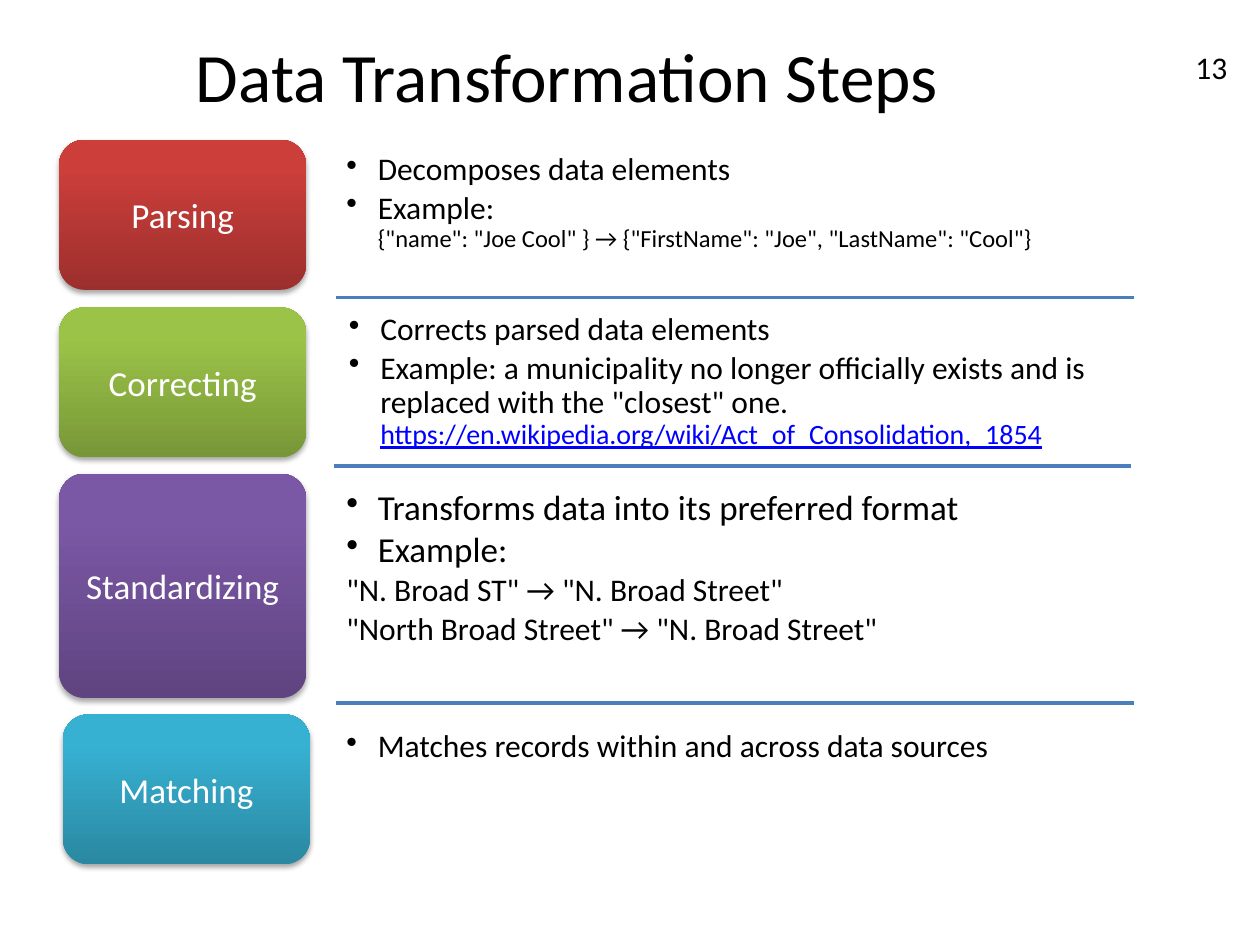
"""Build the Data Transformation Steps slide."""
import pptx
import pptx.dml.color
import pptx.enum.shapes
import pptx.enum.text
import pptx.oxml
import pptx.oxml.ns
import pptx.util
from pptx.util import Inches, Pt

ALIGN = pptx.enum.text.PP_ALIGN
MIDDLE = pptx.enum.text.MSO_ANCHOR.MIDDLE


def color(value):
    return pptx.dml.color.RGBColor.from_string(value)


def element(markup):
    return pptx.oxml.parse_xml(markup.replace(" ", f" {pptx.oxml.ns.nsdecls('a')} ", 1))


class StepSlide:
    font = "Calibri"
    text_color = "000000"
    link_color = "0000FF"
    rule_color = "4B7EBC"

    def __init__(self, slide):
        self.slide = slide

    def style(self, span, size, fill=None):
        span.font.name = self.font
        span.font.size = Pt(size)
        span.font.color.rgb = color(fill or self.text_color)

    def single_line(self, shape, text, size, align, fill=None):
        frame = shape.text_frame
        frame.text = text
        frame.word_wrap = True
        frame.auto_size = pptx.enum.text.MSO_AUTO_SIZE.NONE
        frame.vertical_anchor = MIDDLE
        frame.paragraphs[0].alignment = align
        self.style(frame.paragraphs[0].runs[0], size, fill)

    def title(self, text):
        shape = self.slide.shapes.title
        shape.left, shape.top = Inches(0), Inches(0.3)
        shape.width, shape.height = Inches(9), Inches(0.58)
        self.single_line(shape, text, 39.6, ALIGN.CENTER)

    def number(self, text):
        box = self.slide.shapes.add_textbox(Inches(8.17), Inches(0.33), Inches(1.67), Inches(0.4))
        self.single_line(box, text, 18, ALIGN.RIGHT)

    def step(self, name, left, top, height, dark, light):
        box = self.slide.shapes.add_shape(
            pptx.enum.shapes.MSO_SHAPE.ROUNDED_RECTANGLE,
            Inches(left), Inches(top), Inches(1.96), Inches(height))
        box.adjustments[0] = 0.2 / min(height, 1.96)
        box.line.fill.background()
        box.fill.gradient()
        box.fill.gradient_angle = 90
        for stop, position, shade in zip(box.fill.gradient_stops, (0, 0.8), (dark, light)):
            stop.position = position
            stop.color.rgb = color(shade)
        box.shadow.inherit = False
        effects = box._element.spPr.find(pptx.oxml.ns.qn("a:effectLst"))
        effects.append(element(
            f'<a:outerShdw blurRad="{Pt(3.1)}" dist="{Pt(1.8)}" dir="5400000" rotWithShape="0">'
            '<a:srgbClr val="000000"><a:alpha val="35000"/></a:srgbClr></a:outerShdw>'))
        self.single_line(box, name, 20, ALIGN.CENTER, "FFFFFF")

    def details(self, left, top, height, lines):
        box = self.slide.shapes.add_textbox(Inches(left), Inches(top), Inches(6.33), Inches(height))
        frame = box.text_frame
        frame.word_wrap = True
        for index, (text, bulleted, sizes) in enumerate(lines):
            para = frame.add_paragraph() if index else frame.paragraphs[0]
            para.text = text
            para.line_spacing = 0.9
            para.space_after = Pt(2.5)
            if bulleted:
                properties = para._p.get_or_add_pPr()
                properties.set("marL", str(Inches(0.25)))
                properties.set("indent", str(Inches(-0.25)))
                properties.append(element('<a:buChar char="•"/>'))
            for span, size in zip(para.runs, sizes):
                is_link = span.text.startswith("https://")
                self.style(span, size, self.link_color if is_link else None)
                if is_link:
                    span.font.underline = True

    def rule(self, left, top):
        line = self.slide.shapes.add_connector(
            pptx.enum.shapes.MSO_CONNECTOR.STRAIGHT,
            Inches(left), Inches(top), Inches(left + 6.33), Inches(top))
        line.line.color.rgb = color(self.rule_color)
        line.line.width = Pt(2)
        line._element.spPr.append(element('<a:effectLst />'))


STEPS = [
    ("Parsing", 0.47, 1.11, 1.19, "9C2F2D", "CB3E3A"),
    ("Correcting", 0.47, 2.44, 1.19, "779737", "9BC348"),
    ("Standardizing", 0.47, 3.76, 1.78, "5F4480", "7B58A6"),
    ("Matching", 0.5, 5.67, 1.19, "2A88A2", "37B1D2"),
]
DETAILS = [
    (2.65, 1.17, 0.9, [
        ("Decomposes data elements", True, [18]),
        ('Example:\v{"name": "Joe Cool" } → {"FirstName": "Joe", "LastName": "Cool"}',
         True, [18, 14]),
    ]),
    (2.67, 2.44, 1.21, [
        ("Corrects parsed data elements", True, [18]),
        ("Example: a municipality no longer officially exists and is replaced with the "
         '"closest" one.\vhttps://en.wikipedia.org/wiki/Act_of_Consolidation,_1854',
         True, [18, 16]),
    ]),
    (2.65, 3.84, 1.72, [
        ("Transforms data into its preferred format", True, [20]),
        ("Example:", True, [20]),
        ('"N. Broad ST" → "N. Broad Street"', False, [18]),
        ('"North Broad Street" → "N. Broad Street"', False, [18]),
    ]),
    (2.65, 5.75, 0.37, [
        ("Matches records within and across data sources", True, [18]),
    ]),
]
RULES = [(2.67, 2.36), (2.65, 3.7), (2.67, 5.58)]


def main():
    deck = pptx.Presentation()
    deck.slide_width, deck.slide_height = Inches(10), Inches(7.5)
    page = StepSlide(deck.slides.add_slide(deck.slide_layouts[5]))
    page.number("13")
    page.title("Data Transformation Steps")
    for step in STEPS:
        page.step(*step)
    for detail in DETAILS:
        page.details(*detail)
    for rule in RULES:
        page.rule(*rule)
    deck.save("out.pptx")


if __name__ == "__main__":
    main()
